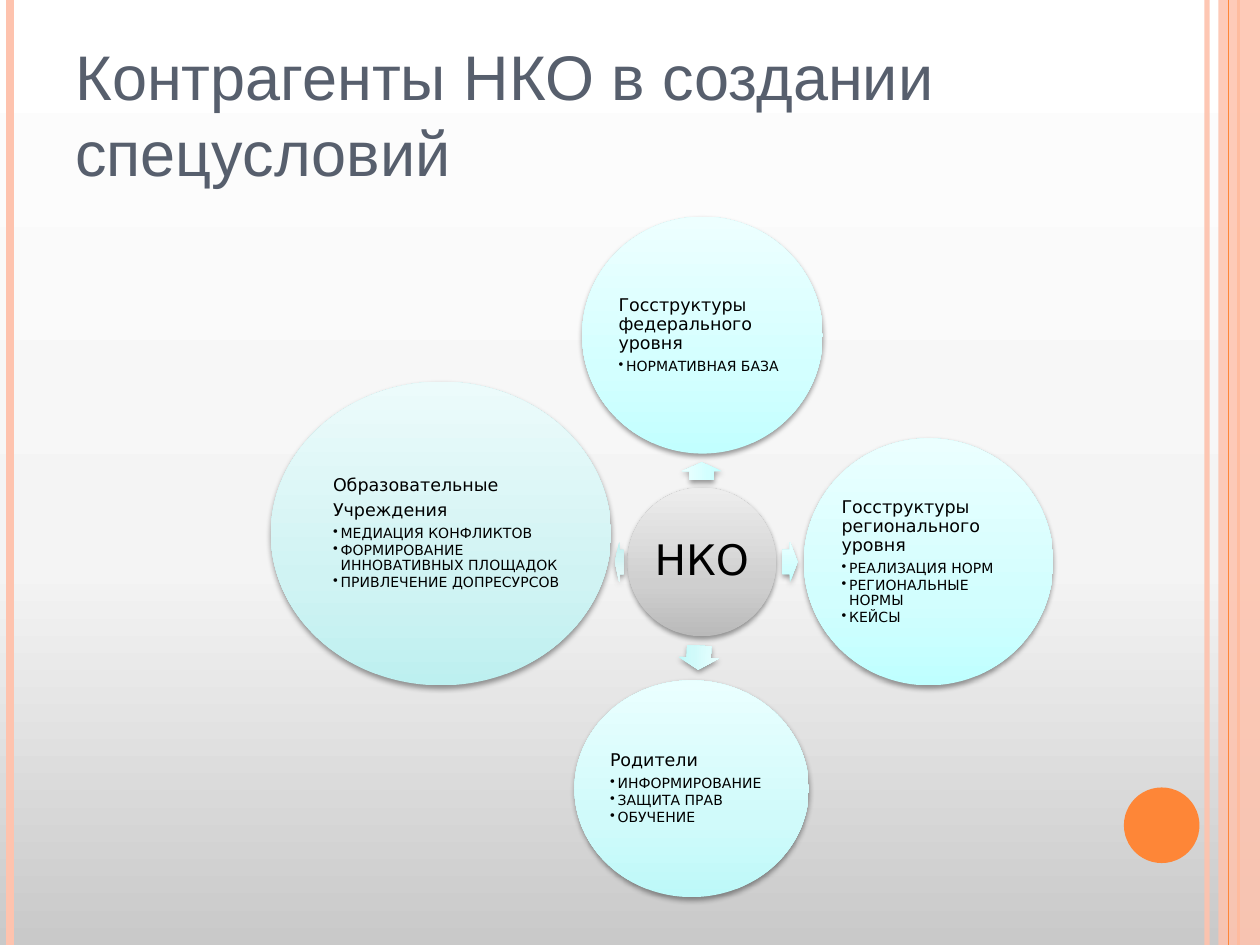
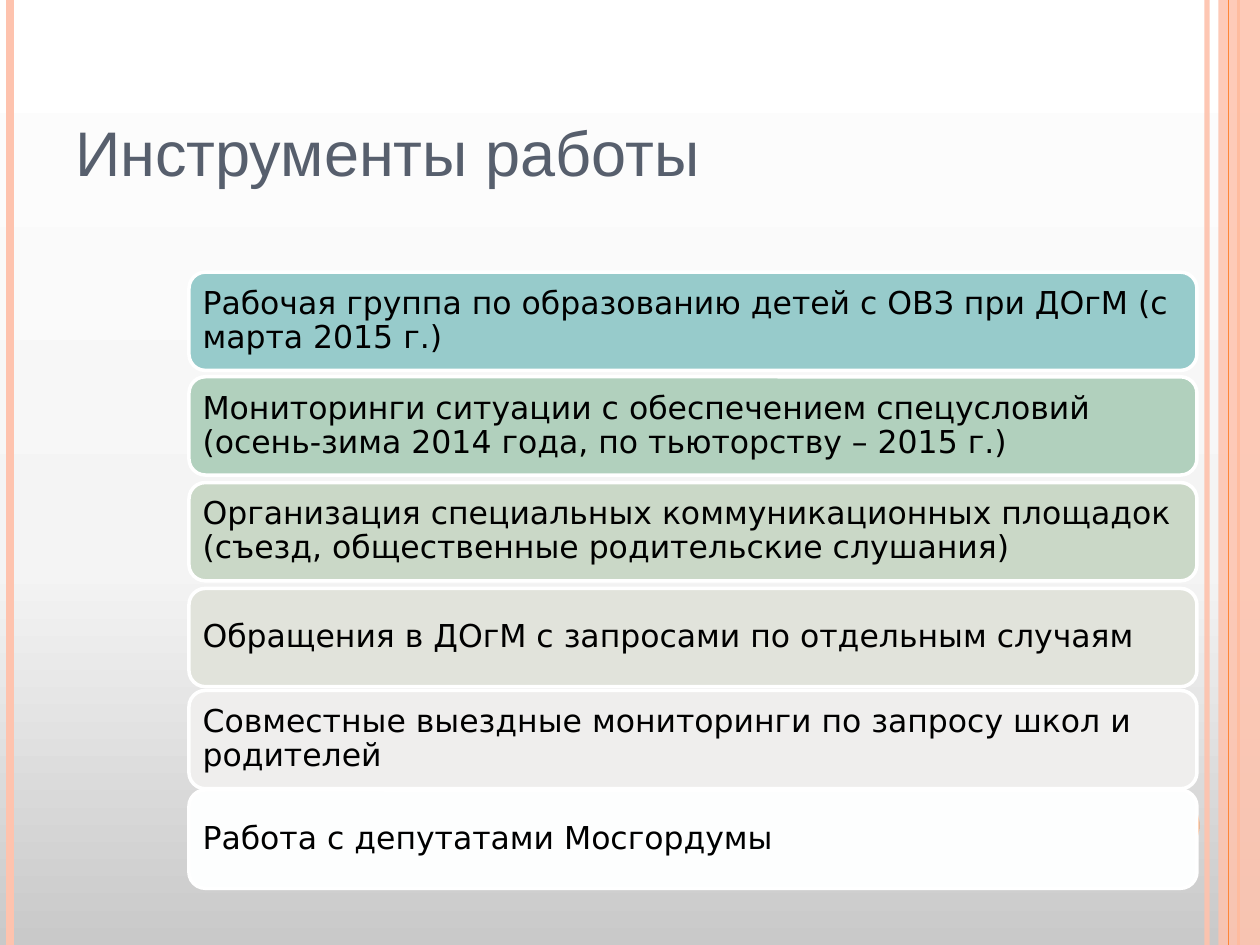
"""Build two slides about the partners and working tools of a non-profit."""
from lxml.etree import SubElement
from pptx import Presentation
from pptx.dml.color import RGBColor
from pptx.enum.shapes import MSO_CONNECTOR, MSO_SHAPE
from pptx.enum.text import MSO_ANCHOR, PP_ALIGN
from pptx.oxml.ns import qn
from pptx.util import Inches, Pt

COLOURS = {
    "title": "575F6D",
    "text": "000000",
    "peach": "FEC3AE",
    "orange": "FE8637",
    "outline": "FFFFFF",
}
GRADIENTS = {
    "page": [(0, "C9C9C9"), (40, "F4F4F4"), (100, "FFFFFF")],
    "centre": [(0, "BABABA"), (35, "CFCFCF"), (100, "EDEDED")],
    "federal": [(0, "C2FFFF"), (35, "D3FFFF"), (100, "EDFFFF")],
    "regional": [(0, "BFFFFF"), (35, "D2FEFE"), (100, "EBFFFF")],
    "parents": [(0, "BDF9F9"), (35, "D0FAFA"), (100, "EAFFFF")],
    "schools": [(0, "BDF0F0"), (35, "D0F3F3"), (100, "ECFBFB")],
}
TITLE_FONT = "Arial"
BODY_FONT = "DejaVu Sans"
PAGE_WIDTH, PAGE_HEIGHT = 10, 7.5

PARTNERS = [
    ("federal", (4.62, 1.72, 1.91, 1.88), (5.5, 3.58, 0.14, 0.32), 270, 0.01,
     ["Госструктуры федерального уровня"],
     ["НОРМАТИВНАЯ БАЗА"]),
    ("regional", (6.38, 3.48, 1.98, 1.96), (6.21, 4.3, 0.12, 0.32), 0, 0.01,
     ["Госструктуры регионального уровня"],
     ["РЕАЛИЗАЦИЯ НОРМ", "РЕГИОНАЛЬНЫЕ НОРМЫ", "КЕЙСЫ"]),
    ("parents", (4.56, 5.4, 1.86, 1.72), (5.45, 5.06, 0.19, 0.32), 92.5, 0.01,
     ["Родители"],
     ["ИНФОРМИРОВАНИЕ", "ЗАЩИТА ПРАВ", "ОБУЧЕНИЕ"]),
    ("schools", (2.15, 3.03, 2.7, 2.41), (4.88, 4.3, 0.07, 0.32), 180, 0.1,
     ["Образовательные", "Учреждения"],
     ["МЕДИАЦИЯ КОНФЛИКТОВ", "ФОРМИРОВАНИЕ ИННОВАТИВНЫХ ПЛОЩАДОК",
      "ПРИВЛЕЧЕНИЕ ДОПРЕСУРСОВ"]),
]
TOOLS = [
    (2.16, "97CBCB", "Рабочая группа по образованию детей с ОВЗ при ДОгМ (с марта 2015 г.)"),
    (2.99, "B1D0BD", "Мониторинги ситуации с обеспечением спецусловий "
                     "(осень-зима 2014 года, по тьюторству – 2015 г.)"),
    (3.83, "CAD8C7", "Организация специальных коммуникационных площадок "
                     "(съезд, общественные родительские слушания)"),
    (4.67, "E1E3DB", "Обращения в ДОгМ с запросами по отдельным случаям"),
    (5.48, "EFEEED", "Совместные выездные мониторинги по запросу школ и родителей"),
    (6.27, "FDFEFE", "Работа с депутатами Мосгордумы"),
]


def colour(value):
    """Turn a hex string into a colour."""
    return RGBColor.from_string(value)


def set_alpha(element, percent):
    """Set the opacity of the first colour in an element."""
    tint = next(element.iter(qn("a:srgbClr")))
    SubElement(tint, qn("a:alpha"), val=str(percent * 1000))


def fill_gradient(fill, element, stops):
    """Fill with colour stops that run from bottom to top."""
    fill.gradient()
    fill.gradient_angle = 90
    stop_list = next(element.iter(qn("a:gsLst")))
    for stop in list(stop_list):
        stop_list.remove(stop)
    for position, value in stops:
        stop = SubElement(stop_list, qn("a:gs"), pos=str(position * 1000))
        SubElement(stop, qn("a:srgbClr"), val=value)


def add_soft_shadow(shape):
    """Cast a soft shadow straight down."""
    effects = shape.element.spPr.find(qn("a:effectLst"))
    shadow = SubElement(effects, qn("a:outerShdw"), blurRad=str(Pt(3.1)),
                        dist=str(Pt(1.6)), dir="5400000", rotWithShape="0")
    tint = SubElement(shadow, qn("a:srgbClr"), val=COLOURS["text"])
    SubElement(tint, qn("a:alpha"), val="38000")


def add_plain_shape(page, kind, place):
    """Add a preset shape without outline or shadow."""
    shape = page.shapes.add_shape(kind, *map(Inches, place))
    shape.shadow.inherit = False
    shape.line.fill.background()
    return shape


def add_solid_shape(page, kind, place, value):
    """Add a preset shape with one fill colour."""
    shape = add_plain_shape(page, kind, place)
    shape.fill.solid()
    shape.fill.fore_color.rgb = colour(value)
    return shape


def add_glossy_shape(page, kind, place, gradient):
    """Add a preset shape with a gradient and a soft shadow."""
    shape = add_plain_shape(page, kind, place)
    fill_gradient(shape.fill, shape.element, GRADIENTS[gradient])
    add_soft_shadow(shape)
    return shape


def add_stripe(page, x, value, width):
    """Add a vertical line over the full page height."""
    stripe = page.shapes.add_connector(
        MSO_CONNECTOR.STRAIGHT, Inches(x), 0, Inches(x), Inches(PAGE_HEIGHT))
    stripe.line.color.rgb = colour(value)
    stripe.line.width = Pt(width)
    SubElement(stripe.element.spPr, qn("a:effectLst"))
    return stripe


def set_frame(shape, anchor, left, top, right, bottom):
    """Wrap the text of a shape, set its anchor and margins."""
    frame = shape.text_frame
    frame.word_wrap = True
    frame.vertical_anchor = anchor
    frame.margin_left, frame.margin_top = Inches(left), Inches(top)
    frame.margin_right, frame.margin_bottom = Inches(right), Inches(bottom)
    return frame


def add_span(para, text, size, font=BODY_FONT, value=COLOURS["text"]):
    """Add a run of text to a paragraph."""
    span = para.add_run()
    span.text = text
    span.font.size = Pt(size)
    span.font.name = font
    span.font.color.rgb = colour(value)


def add_body_para(frame, text, size, before=0, align=PP_ALIGN.LEFT):
    """Add a tight paragraph, using the empty first one if it is free."""
    first = frame.paragraphs[0]
    para = frame.add_paragraph() if first.runs else first
    para.alignment = align
    para.line_spacing = 0.9
    para.space_before = Pt(before)
    add_span(para, text, size)
    return para


def add_bullet(frame, text, before):
    """Add a small bulleted paragraph."""
    para = add_body_para(frame, text, 8, before)
    para.level = 1
    properties = para._p.get_or_add_pPr()
    properties.set("marL", str(Inches(0.06)))
    properties.set("indent", str(-Inches(0.06)))
    tint = SubElement(properties, qn("a:buClr"))
    SubElement(tint, qn("a:srgbClr"), val=COLOURS["text"])
    SubElement(properties, qn("a:buChar"), char="•")


def add_page(deck, title):
    """Add a page with the shared background, side bands and title."""
    page = deck.slides.add_slide(deck.slide_layouts[6])
    fill_gradient(page.background.fill, page.element, GRADIENTS["page"])
    inner = add_stripe(page, 9.58, COLOURS["peach"], 3)
    set_alpha(inner.element, 93)
    add_stripe(page, 0.08, COLOURS["peach"], 4.5)
    add_stripe(page, 9.83, COLOURS["orange"], 1.5)
    band = add_solid_shape(page, MSO_SHAPE.RECTANGLE,
                           (9.67, 0, 0.33, PAGE_HEIGHT), COLOURS["peach"])
    set_alpha(band.element, 87)
    add_stripe(page, 9.75, COLOURS["orange"], 0.75)
    add_solid_shape(page, MSO_SHAPE.OVAL, (8.92, 6.25, 0.6, 0.6), COLOURS["orange"])
    box = page.shapes.add_textbox(*map(Inches, (0.5, 0.3, 8.17, 1.25)))
    frame = set_frame(box, MSO_ANCHOR.BOTTOM, 0.1, 0.05, 0.1, 0.05)
    add_span(frame.paragraphs[0], title, 36, TITLE_FONT, COLOURS["title"])
    return page


def add_centre(page, text):
    """Add the grey circle in the middle of the diagram."""
    circle = add_glossy_shape(page, MSO_SHAPE.OVAL, (4.98, 3.87, 1.18, 1.18), "centre")
    frame = set_frame(circle, MSO_ANCHOR.MIDDLE, 0.03, 0.03, 0.03, 0.03)
    add_body_para(frame, text, 24, align=PP_ALIGN.CENTER)


def add_partner(page, gradient, circle_place, arrow_place, turn, left, heads, duties):
    """Add a partner circle with its arrow from the centre."""
    arrow = add_glossy_shape(page, MSO_SHAPE.RIGHT_ARROW, arrow_place, gradient)
    arrow.adjustments[0] = 0.6
    arrow.adjustments[1] = 0.5
    arrow.rotation = turn
    circle = add_glossy_shape(page, MSO_SHAPE.OVAL, circle_place, gradient)
    frame = set_frame(circle, MSO_ANCHOR.MIDDLE, left, 0.01, 0, 0.01)
    for index, head in enumerate(heads):
        add_body_para(frame, head, 10, 3.5 if index else 0)
    for index, duty in enumerate(duties):
        add_bullet(frame, duty, 1.2 if index else 3.5)


def add_tool_bar(page, top, value, text):
    """Add a rounded bar that names one tool."""
    bar = add_solid_shape(page, MSO_SHAPE.ROUNDED_RECTANGLE, (1.5, top, 8, 0.78), value)
    bar.adjustments[0] = 0.167
    bar.line.color.rgb = colour(COLOURS["outline"])
    bar.line.width = Pt(2)
    frame = set_frame(bar, MSO_ANCHOR.MIDDLE, 0.07, 0.07, 0.07, 0.07)
    add_body_para(frame, text, 18)


def main():
    """Build the deck and save it."""
    deck = Presentation()
    deck.slide_width = Inches(PAGE_WIDTH)
    deck.slide_height = Inches(PAGE_HEIGHT)
    partners_page = add_page(deck, "Контрагенты НКО в создании спецусловий")
    add_centre(partners_page, "НКО")
    for partner in PARTNERS:
        add_partner(partners_page, *partner)
    tools_page = add_page(deck, "Инструменты работы")
    for tool in TOOLS:
        add_tool_bar(tools_page, *tool)
    deck.save("out.pptx")


if __name__ == "__main__":
    main()
